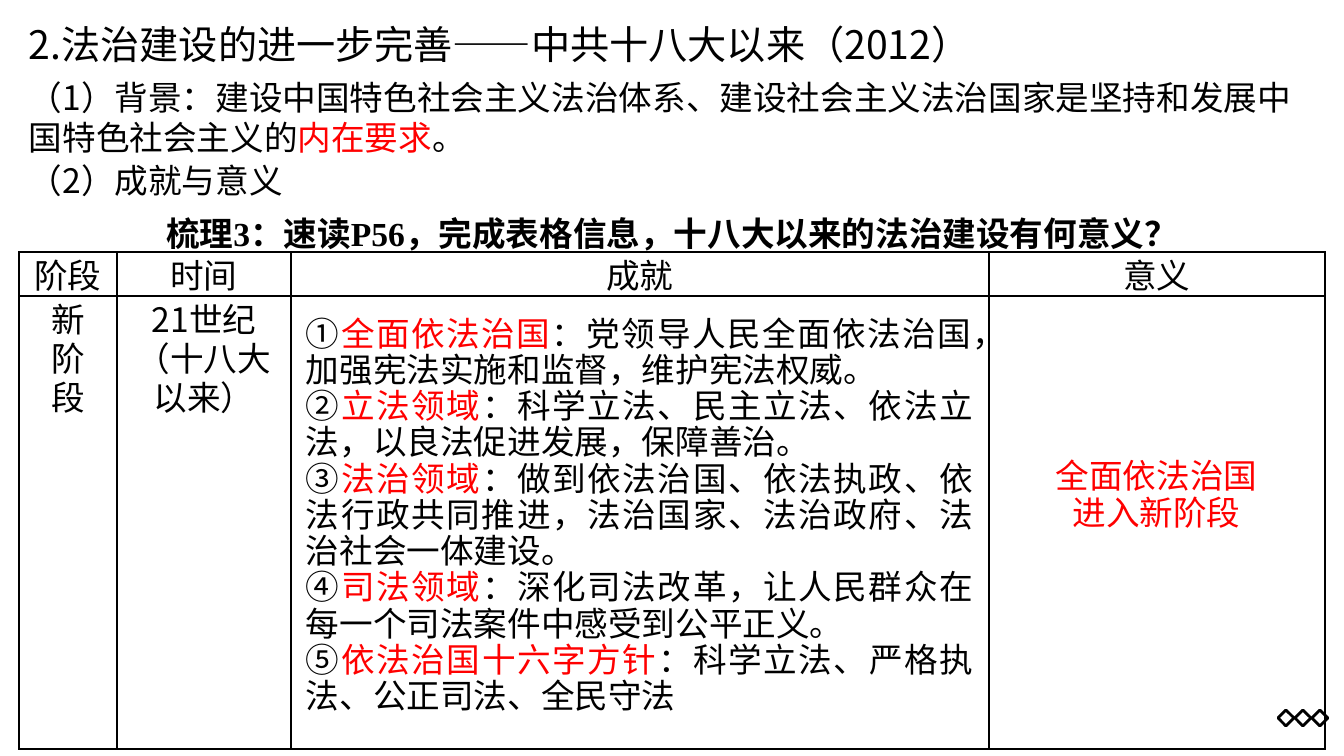
from dataclasses import dataclass

from lxml import etree
from pptx import Presentation
from pptx import util as u
from pptx.dml.color import RGBColor
from pptx.enum import shapes, text
from pptx.oxml import ns

EMU_PER_PX = 12192000 / 1344
CENTER, JUSTIFY, LEFT = text.PP_ALIGN.CENTER, text.PP_ALIGN.JUSTIFY, text.PP_ALIGN.LEFT


@dataclass(frozen=True)
class Theme:
    ink: str = "000000"
    accent: str = "FF0000"
    sans: str = "Noto Sans CJK SC"
    serif: str = "Times New Roman"
    title: int = 28
    body: int = 24
    rule: int = 1
    outline: int = 2


THEME = Theme()


@dataclass(frozen=True)
class Span:
    words: str
    color: str = THEME.ink


@dataclass(frozen=True)
class TextBlock:
    place: tuple[int, int, int, int]
    paras: list[list[Span]]
    align: text.PP_ALIGN = LEFT
    size: int = THEME.body
    font: str = THEME.sans
    bold: bool = False
    spacing: float = 1.0


def px(length: int) -> u.Emu:
    return u.Emu(round(length * EMU_PER_PX))


def assign(target: object, values: dict[str, object]) -> None:
    for name, value in values.items():
        setattr(target, name, value)


def write_paras(frame, block: TextBlock) -> None:
    for index, spans in enumerate(block.paras):
        para = frame.add_paragraph() if index else frame.paragraphs[0]
        assign(para, {"alignment": block.align, "line_spacing": block.spacing})
        for item in spans:
            span = para.add_run()
            span.text = item.words
            assign(span.font, {"size": u.Pt(block.size), "bold": block.bold, "name": block.font})
            span.font.color.rgb = RGBColor.from_string(item.color)
            east_asian = etree.SubElement(span.font._element, ns.qn("a:ea"))
            east_asian.set("typeface", THEME.sans)


def add_text(page, block: TextBlock) -> None:
    frame = page.shapes.add_textbox(*map(px, block.place)).text_frame
    frame.word_wrap = True
    write_paras(frame, block)


def add_borders(cell) -> None:
    props = cell._tc.get_or_add_tcPr()
    for position, side in enumerate(("lnL", "lnR", "lnT", "lnB")):
        line = etree.Element(ns.qn(f"a:{side}"), w=str(u.Pt(THEME.rule)))
        fill = etree.SubElement(line, ns.qn("a:solidFill"))
        etree.SubElement(fill, ns.qn("a:srgbClr"), val=THEME.ink)
        props.insert(position, line)


def add_grid(page, left: int, top: int, widths: list[int], heights: list[int],
             rows: list[list[list[str]]]) -> None:
    place = map(px, (left, top, sum(widths), sum(heights)))
    table = page.shapes.add_table(len(heights), len(widths), *place).table
    assign(table, {"first_row": False, "horz_banding": False})
    for column, width in zip(table.columns, widths):
        column.width = px(width)
    for row, height, entries in zip(table.rows, heights, rows):
        row.height = px(height)
        for cell, lines in zip(row.cells, entries):
            assign(cell, {"margin_top": px(5), "margin_bottom": px(0)})
            cell.fill.background()
            add_borders(cell)
            paras = [[Span(line)] for line in lines]
            write_paras(cell.text_frame, TextBlock((0, 0, 0, 0), paras, CENTER, spacing=0.8))


def add_diamond(page, left: int, top: int, side: int) -> None:
    diamond = page.shapes.add_shape(shapes.MSO_SHAPE.DIAMOND, *map(px, (left, top, side, side)))
    diamond.shadow.inherit = False
    diamond.fill.background()
    diamond.line.color.rgb = RGBColor.from_string(THEME.ink)
    diamond.line.width = u.Pt(THEME.outline)


ROWS = [
    [["阶段"], ["时间"], ["成就"], ["意义"]],
    [["新", "阶", "段"], ["21世纪", "（十八大以来）"], [], []],
]

ACHIEVEMENTS = [
    ("①", "全面依法治国", "：党领导人民全面依法治国，加强宪法实施和监督，维护宪法权威。"),
    ("②", "立法领域", "：科学立法、民主立法、依法立法，以良法促进发展，保障善治。"),
    ("③", "法治领域", "：做到依法治国、依法执政、依法行政共同推进，法治国家、法治政府、法治社会一体建设。"),
    ("④", "司法领域", "：深化司法改革，让人民群众在每一个司法案件中感受到公平正义。"),
    ("⑤", "依法治国十六字方针", "：科学立法、严格执法、公正司法、全民守法"),
]

BLOCKS = [
    # Background
    TextBlock((19, 72, 1309, 92), [[
        Span("（1）背景：建设中国特色社会主义法治体系、建设社会主义法治国家是坚持和发展中国特色社会主义的"),
        Span("内在要求", THEME.accent),
        Span("。"),
    ]]),
    # Achievements
    TextBlock((296, 312, 687, 413),
              [[Span(mark), Span(field, THEME.accent), Span(detail)]
               for mark, field, detail in ACHIEVEMENTS],
              JUSTIFY, spacing=0.9),
    # Headings
    TextBlock((19, 15, 1094, 57), [[Span("2.法治建设的进一步完善——中共十八大以来（2012）")]],
              size=THEME.title),
    TextBlock((19, 208, 1306, 50),
              [[Span("梳理3：速读P56，完成表格信息，十八大以来的法治建设有何意义？")]],
              CENTER, font=THEME.serif, bold=True),
    TextBlock((19, 155, 314, 57), [[Span("（2）成就与意义")]]),
    # Significance
    TextBlock((1002, 455, 309, 84),
              [[Span(line, THEME.accent)] for line in ("全面依法治国", "进入新阶段")],
              CENTER, spacing=0.9),
]


def main() -> None:
    deck = Presentation()
    assign(deck, {"slide_width": px(1344), "slide_height": px(756)})
    page = deck.slides.add_slide(deck.slide_layouts[6])

    # Table of stages
    add_grid(page, 19, 252, [98, 174, 698, 336], [42, 453], ROWS)

    # Corner ornament
    for step in range(3):
        add_diamond(page, 1278 + 17 * step, 710, 16)

    # Text over the table and above it
    for block in BLOCKS:
        add_text(page, block)

    deck.save("out.pptx")


if __name__ == "__main__":
    main()
